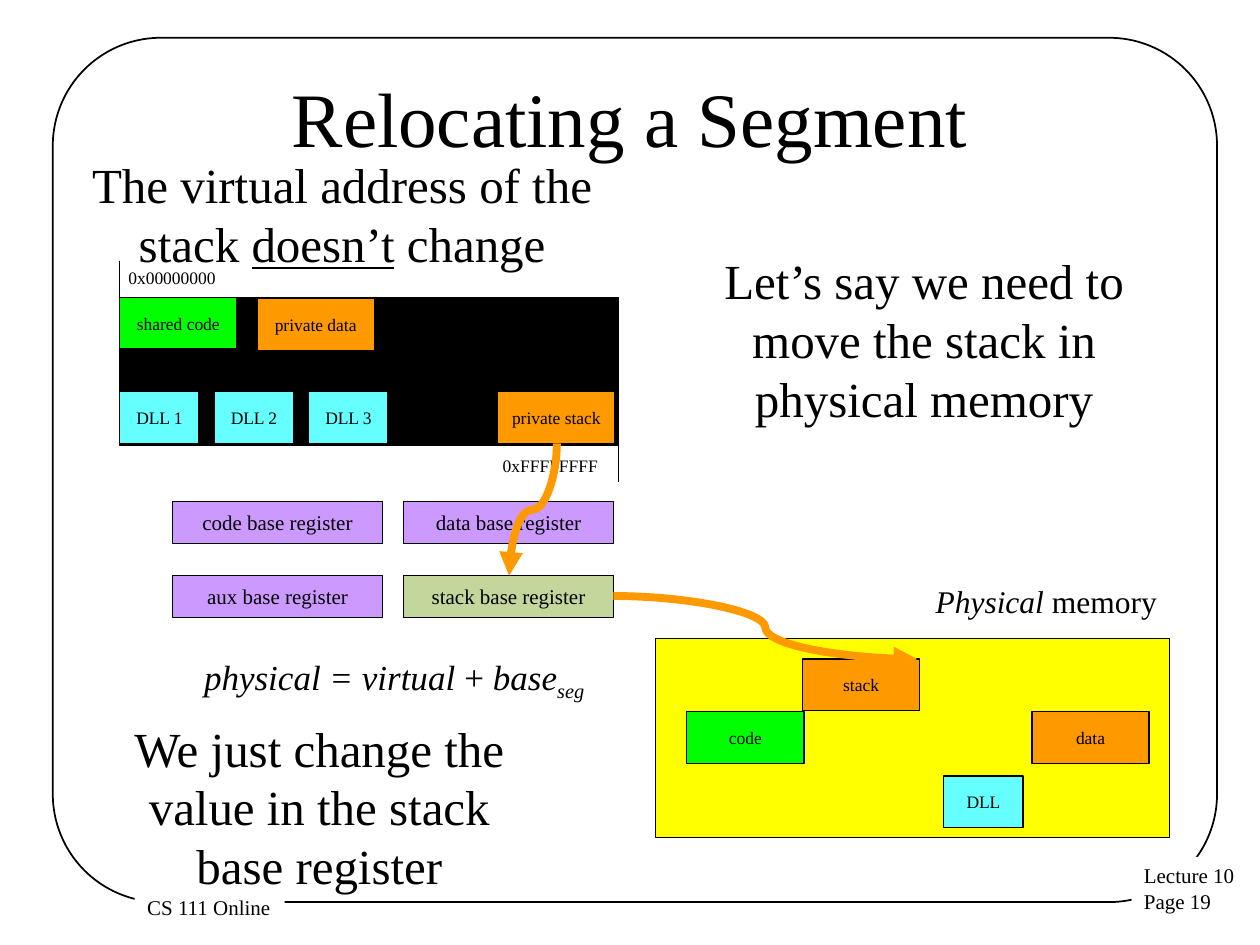
from lxml import etree
from pptx import Presentation
from pptx.dml.color import RGBColor
from pptx.enum.shapes import MSO_CONNECTOR, MSO_SHAPE
from pptx.enum.text import MSO_ANCHOR, PP_ALIGN
from pptx.oxml.ns import qn
from pptx.util import Pt

RECTANGLE, ROUNDED = MSO_SHAPE.RECTANGLE, MSO_SHAPE.ROUNDED_RECTANGLE
STRAIGHT, CURVE = MSO_CONNECTOR.STRAIGHT, MSO_CONNECTOR.CURVE
LEFT, CENTER, RIGHT = PP_ALIGN.LEFT, PP_ALIGN.CENTER, PP_ALIGN.RIGHT
TOP, MIDDLE = MSO_ANCHOR.TOP, MSO_ANCHOR.MIDDLE

FONT = "Times New Roman"
BLACK, WHITE, YELLOW = "000000", "FFFFFF", "FFFF00"
GREEN, ORANGE, CYAN = "00FF00", "FF9900", "66FFFF"
PURPLE, OLIVE = "CC99FF", "C3D69B"
SEGMENT_WIDTH, DLL_WIDTH, SEGMENT_HEIGHT = 67, 45.4, 29.6
TEXT_INSETS = (7.2, 3.6)


def color(value):
    return RGBColor.from_string(value)


def write(shape, paragraphs, size, align=LEFT, anchor=TOP, wrap=False,
          insets=TEXT_INSETS):
    """Each paragraph is a list of (text, font settings) runs."""
    frame = shape.text_frame
    frame.word_wrap = wrap
    frame.vertical_anchor = anchor
    frame.margin_left = frame.margin_right = Pt(insets[0])
    frame.margin_top = frame.margin_bottom = Pt(insets[1])
    for index, runs in enumerate(paragraphs):
        paragraph = frame.add_paragraph() if index else frame.paragraphs[0]
        paragraph.alignment = align
        for text, settings in runs:
            run = paragraph.add_run()
            run.text = text
            run.font.name = FONT
            run.font.size = Pt(settings.get("size", size))
            run.font.color.rgb = color(BLACK)
            run.font.italic = settings.get("italic")
            run.font.underline = settings.get("underline")
            if "baseline" in settings:
                run.font._element.set("baseline", str(settings["baseline"]))


def add_text(slide, bounds, paragraphs, size, fill=None, **options):
    box = slide.shapes.add_textbox(*map(Pt, bounds))
    if fill:
        box.fill.solid()
        box.fill.fore_color.rgb = color(fill)
    write(box, paragraphs, size, **options)


def add_box(slide, bounds, fill=None, label=None, size=10, kind=RECTANGLE,
            line_width=0.75):
    shape = slide.shapes.add_shape(kind, *map(Pt, bounds))
    shape.shadow.inherit = False
    if fill:
        shape.fill.solid()
        shape.fill.fore_color.rgb = color(fill)
    else:
        shape.fill.background()
    shape.line.color.rgb = color(BLACK)
    shape.line.width = Pt(line_width)
    if label:
        write(shape, [[(label, {})]], size, align=CENTER, anchor=MIDDLE)
    return shape


def add_line(slide, start, end, line_color=BLACK, width=0.25, kind=STRAIGHT):
    line = slide.shapes.add_connector(kind, *map(Pt, start + end))
    line.line.color.rgb = color(line_color)
    line.line.width = Pt(width)
    etree.SubElement(line._element.spPr, qn("a:effectLst"))
    return line


def add_arrow(slide, start, end, quarter_turn=False):
    """A curved arrow; with a quarter turn it leaves and arrives vertically."""
    if quarter_turn:
        middle_x, middle_y = (start[0] + end[0]) / 2, (start[1] + end[1]) / 2
        half_width, half_height = (end[1] - start[1]) / 2, (start[0] - end[0]) / 2
        start = (middle_x - half_width, middle_y - half_height)
        end = (middle_x + half_width, middle_y + half_height)
    arrow = add_line(slide, start, end, ORANGE, 4.5, CURVE)
    if quarter_turn:
        arrow._element.spPr.find(qn("a:xfrm")).set("rot", "5400000")
    etree.SubElement(arrow.line._get_or_add_ln(), qn("a:tailEnd"), type="triangle")


def add_segment(slide, left, top, fill, label, width=SEGMENT_WIDTH):
    add_box(slide, (left, top, width, SEGMENT_HEIGHT), fill, label)


def add_frame(slide):
    frame = add_box(slide, (30.2, 21.6, 665.3, 493.9), kind=ROUNDED, line_width=1)
    frame.adjustments[0] = 0.125
    add_text(slide, (646.6, 489.6, 67, 36.7),
             [[("Lecture 10", {})], [("Page 19", {})]], 12, WHITE)
    add_text(slide, (77, 507.6, 85.7, 21.6), [[("CS 111 Online", {})]], 12, WHITE)
    add_text(slide, (36, 21.6, 648, 90), [[("Relocating a Segment", {})]], 44,
             align=CENTER, anchor=MIDDLE, wrap=True)


def add_virtual_memory(slide):
    left, top, width, height = 68.4, 169.9, 285.1, 84.6
    right, bottom = left + width, top + height
    lower_row = 223.9
    add_box(slide, (left, top, width, height), BLACK)
    add_line(slide, (left, top - 21), (left, top))
    add_line(slide, (right, bottom), (right, bottom + 21))
    add_text(slide, (73.4, 152.6, 50.4, 12.2), [[("0x00000000", {})]], 10,
             insets=(0, 0))
    add_text(slide, (287.3, 259.9, 55.4, 12.2), [[("0xFFFFFFFF", {})]], 10,
             insets=(0, 0))
    add_segment(slide, left, top, GREEN, "shared code")
    add_segment(slide, 146.9, 170.6, ORANGE, "private data")
    add_segment(slide, 284.4, lower_row, ORANGE, "private stack")
    for index in range(3):
        add_segment(slide, left + 54 * index, lower_row, CYAN,
                    f"DLL {index + 1}", DLL_WIDTH)


def add_physical_memory(slide):
    add_box(slide, (374.4, 365, 293.8, 113.8), YELLOW)
    add_text(slide, (524.2, 329, 144, 28.8),
             [[("Physical ", {"italic": True}), ("memory ", {})]], 18, align=RIGHT)
    add_segment(slide, 392.4, 406.8, GREEN, "code")
    add_segment(slide, 589.7, 406.8, ORANGE, "data")
    add_segment(slide, 458.6, 376.6, ORANGE, "stack")
    add_segment(slide, 539.3, 443.5, CYAN, "DLL", DLL_WIDTH)


def add_registers(slide):
    for index, name in enumerate(("code", "data", "aux", "stack")):
        row, column = divmod(index, 2)
        bounds = (98.6 + 132 * column, 286.6 + 42.2 * row, 120.2, 24)
        fill = OLIVE if name == "stack" else PURPLE
        add_box(slide, bounds, fill, f"{name} base register", 12)


def add_explanations(slide):
    italic = {"italic": True}
    formula = [("physical = virtual", italic), (" + ", {}), ("base", italic),
               ("seg", {"italic": True, "baseline": -25000}), (" ", {"size": 18})]
    add_text(slide, (107.3, 370.8, 240.5, 31.7), [formula], 20, align=CENTER)
    virtual_address = [("The virtual address of the stack ", {}),
                       ("doesn’t", {"underline": True}), (" change", {})]
    move = [("Let’s say we need to move the stack in physical memory", {})]
    change = [("We just change the value in the stack base register", {})]
    for bounds, runs in (((388.8, 139.7, 278.6, 108.7), move),
                         ((36, 85, 319, 74.9), virtual_address),
                         ((54, 406.8, 257, 108.7), change)):
        add_text(slide, bounds, [runs], 28, align=CENTER, wrap=True)


def main():
    presentation = Presentation()
    presentation.slide_width, presentation.slide_height = Pt(720), Pt(540)
    slide = presentation.slides.add_slide(presentation.slide_layouts[6])
    add_frame(slide)
    add_virtual_memory(slide)
    add_physical_memory(slide)
    add_registers(slide)
    # Stack to its base register, then on to physical memory
    add_arrow(slide, (350.6, 340.6), (524.2, 376.6))
    add_arrow(slide, (318.2, 253.4), (290.9, 329), quarter_turn=True)
    add_explanations(slide)
    presentation.save("out.pptx")


if __name__ == "__main__":
    main()
